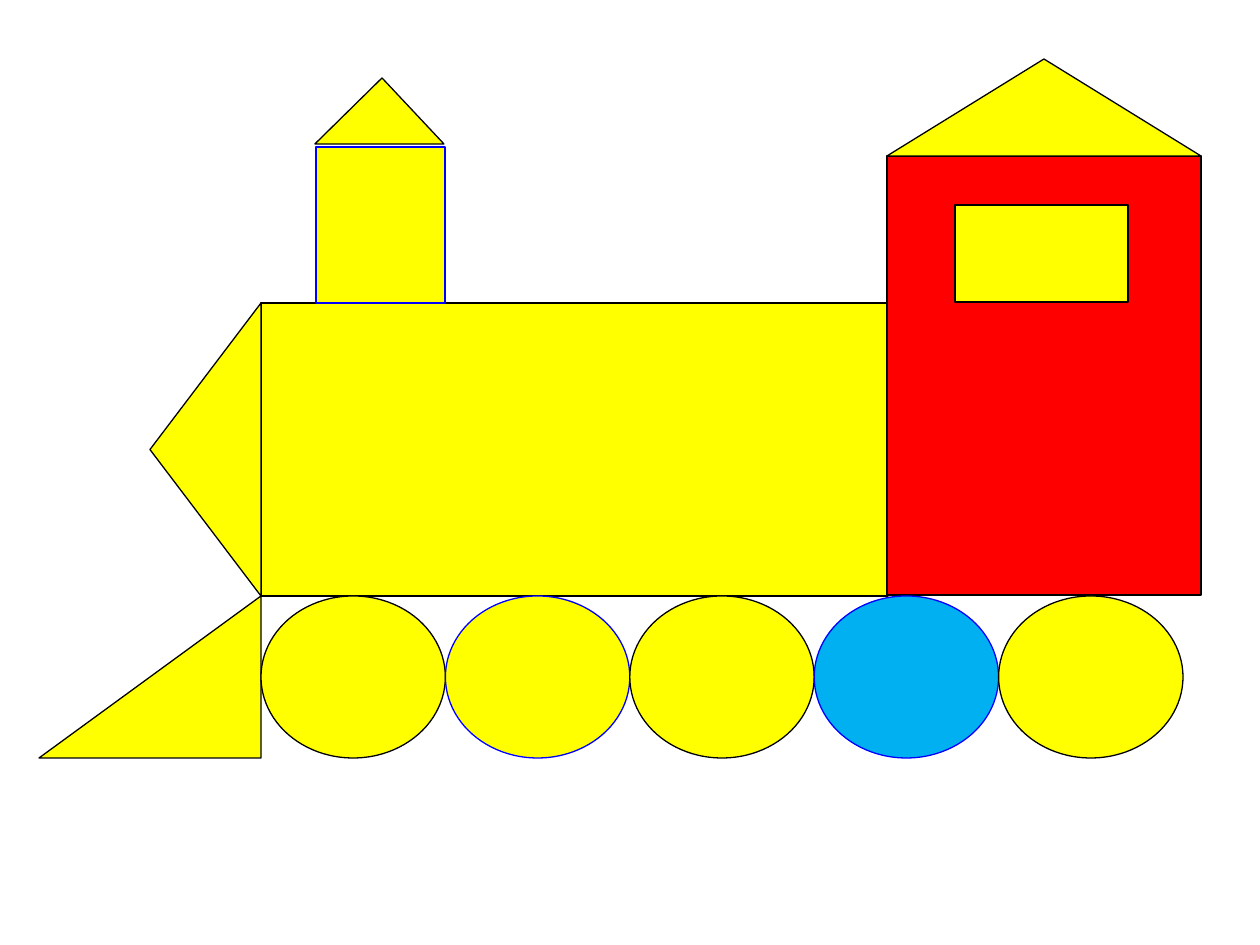
import pptx
import pptx.util
from pptx.dml.color import RGBColor
from pptx.enum.shapes import MSO_SHAPE

PX = pptx.util.Inches(1) / 126
YELLOW = RGBColor(0xFF, 0xFF, 0x00)
RED = RGBColor(0xFF, 0x00, 0x00)
SKY = RGBColor(0x00, 0xB0, 0xF0)
BLUE = RGBColor(0x00, 0x00, 0xFF)
BLACK = RGBColor(0x00, 0x00, 0x00)


def add_part(train, preset, box, fill=YELLOW, outline=BLACK):
    part = train.shapes.add_shape(preset, *(round(v * PX) for v in box))
    part.shadow.inherit = False
    part.fill.solid()
    part.fill.fore_color.rgb = fill
    part.line.color.rgb = outline
    part.line.width = pptx.util.Pt(0.75)
    return part


def add_turned_part(train, preset, box):
    """Fill the box with a preset turned a quarter to the left."""
    left, top, width, height = box
    shift = (width - height) / 2
    part = add_part(train, preset, (left + shift, top - shift, height, width))
    part.rotation = 270


def add_chimney(train, box):
    left, top, width, height = box
    cap_height, gap = 66, 3
    stack_top = cap_height + gap
    add_part(train, MSO_SHAPE.RECTANGLE,
             (left + 1, top + stack_top, width, height - stack_top), outline=BLUE)
    cap = add_part(train, MSO_SHAPE.ISOSCELES_TRIANGLE, (left, top, width, cap_height))
    cap.adjustments[0] = 0.52


def add_front(train, box):
    left, top, width, height = box
    nose_width, nose_height = 111, 293
    # Pointed nose above, cowcatcher below
    add_turned_part(train, MSO_SHAPE.ISOSCELES_TRIANGLE,
                    (left + width - nose_width, top, nose_width, nose_height))
    add_turned_part(train, MSO_SHAPE.RIGHT_TRIANGLE,
                    (left, top + nose_height, width, height - nose_height))


def add_cab(train, box):
    left, top, width, height = box
    roof_height = 97
    add_part(train, MSO_SHAPE.RECTANGLE,
             (left, top + roof_height, width, height - roof_height), fill=RED)
    add_part(train, MSO_SHAPE.RECTANGLE, (left + 68, top + 146, 173, 97))
    add_part(train, MSO_SHAPE.ISOSCELES_TRIANGLE, (left, top, width, roof_height))


def add_wheels(train, box):
    left, top, width, height = box
    colours = [(YELLOW, BLACK), (YELLOW, BLUE), (YELLOW, BLACK),
               (SKY, BLUE), (YELLOW, BLACK)]
    wheel_width = width / len(colours)
    for i, (fill, outline) in enumerate(colours):
        add_part(train, MSO_SHAPE.OVAL,
                 (left + i * wheel_width, top, wheel_width, height), fill, outline)


def main():
    deck = pptx.Presentation()
    deck.slide_width = round(1260 * PX)
    deck.slide_height = round(945 * PX)
    slide = deck.slides.add_slide(deck.slide_layouts[6])
    train = slide.shapes.add_group_shape()

    # Boiler
    add_part(train, MSO_SHAPE.RECTANGLE, (261, 303, 627, 293))
    add_cab(train, (887, 59, 314, 536))
    add_chimney(train, (315, 78, 129, 225))
    add_front(train, (39, 303, 222, 455))
    add_wheels(train, (261, 596, 922, 162))

    deck.save("out.pptx")


if __name__ == "__main__":
    main()
